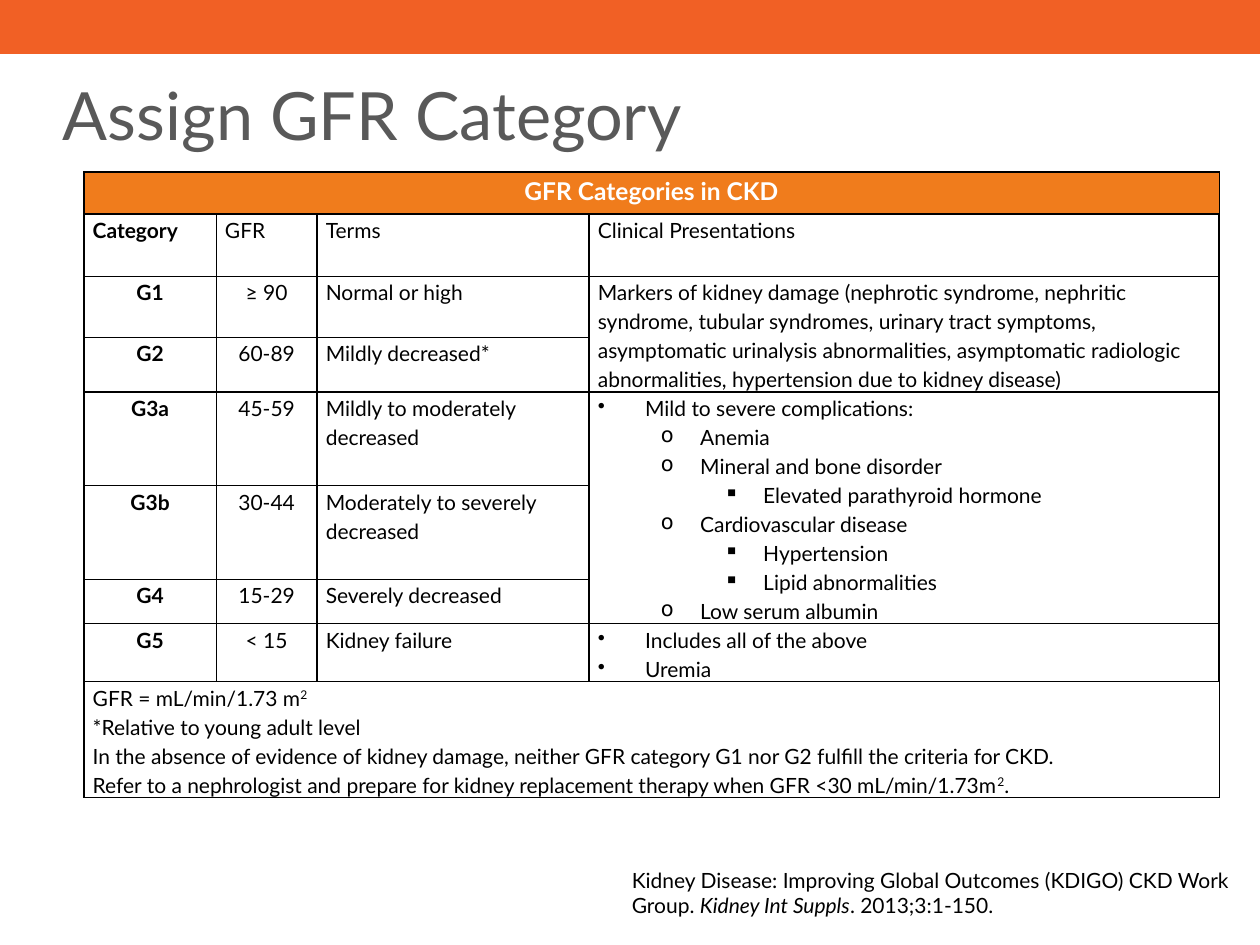
import pptx
import pptx.dml.color
import pptx.enum.shapes
import pptx.enum.text
import pptx.oxml
import pptx.oxml.ns
import pptx.util
from lxml import etree

Pt = pptx.util.Pt
RGBColor = pptx.dml.color.RGBColor
ALIGN = pptx.enum.text.PP_ALIGN
qn = pptx.oxml.ns.qn

BANNER = RGBColor(0xF1, 0x60, 0x25)
HEADER = RGBColor(0xF0, 0x7C, 0x1C)
GREY = RGBColor(0x59, 0x59, 0x59)
WHITE = RGBColor(0xFF, 0xFF, 0xFF)
BLACK = RGBColor(0, 0, 0)
FONT = "Lato"

TITLE = "Assign GFR Category"
TABLE_TITLE = "GFR Categories in CKD"
HEADINGS = ["Category", "GFR", "Terms", "Clinical Presentations"]
CATEGORIES = [
    ("G1", "≥ 90", "Normal or high"),
    ("G2", "60-89", "Mildly decreased*"),
    ("G3a", "45-59", "Mildly to moderately decreased"),
    ("G3b", "30-44", "Moderately to severely decreased"),
    ("G4", "15-29", "Severely decreased"),
    ("G5", "< 15", "Kidney failure"),
]
# (first row, last row, paragraphs as (bullet level or None, text))
PRESENTATIONS = [
    (2, 3, [(None, "Markers of kidney damage (nephrotic syndrome, nephritic syndrome, "
                   "tubular syndromes, urinary tract symptoms, asymptomatic urinalysis "
                   "abnormalities, asymptomatic radiologic abnormalities, hypertension "
                   "due to kidney disease)")]),
    (4, 6, [(0, "Mild to severe complications:"),
            (1, "Anemia"),
            (1, "Mineral and bone disorder"),
            (2, "Elevated parathyroid hormone"),
            (1, "Cardiovascular disease"),
            (2, "Hypertension"),
            (2, "Lipid abnormalities"),
            (1, "Low serum albumin")]),
    (7, 7, [(0, "Includes all of the above"), (0, "Uremia")]),
]
SUP = {"sup": True}
NOTES = [
    [("GFR = mL/min/1.73 m", {}), ("2", SUP)],
    "*Relative to young adult level",
    "In the absence of evidence of kidney damage, neither GFR category G1 nor G2 "
    "fulfill the criteria for CKD.",
    [("Refer to a nephrologist and prepare for kidney replacement therapy when "
      "GFR <30 mL/min/1.73m", {}), ("2", SUP), (".", {})],
]
SOURCE = [
    ("Kidney Disease: Improving Global Outcomes (KDIGO) CKD Work Group. ", {}),
    ("Kidney Int Suppls", {"italic": True}),
    (". 2013;3:1-150.", {}),
]

# level: (bullet, left margin, hanging indent)
BULLETS = [("•", 27, -27), ("o", 58.5, -22.5), ("▪", 94.5, -22.5)]
COL_WIDTHS = [75.6, 57.6, 155.5, 360]
ROW_HEIGHTS = [24, 35.3, 35, 31.3, 53.5, 53.5, 25.5, 33.1, 66.3]
THICK_ROW_EDGES = {0, 1, 4, 7, 8, 9}
THICK_COL_EDGES = {0, 2, 3, 4}
THICK, THIN = 1, 0.5


def add_text(tf, text, size=12, color=BLACK, bold=False, align=None, spacing=None, level=None):
    """Add one paragraph; text is a string or a list of (text, run format)."""
    p = tf.paragraphs[0]
    if p.runs:
        p = tf.add_paragraph()
    if level is not None:
        bullet, margin, indent = BULLETS[level]
        p.level = level
        pPr = p._p.get_or_add_pPr()
        pPr.set("marL", str(Pt(margin)))
        pPr.set("indent", str(Pt(indent)))
        etree.SubElement(pPr, qn("a:buChar"), char=bullet)
    p.alignment = align
    p.line_spacing = spacing
    for part, fmt in [(text, {})] if isinstance(text, str) else text:
        r = p.add_run()
        r.text = part
        r.font.name = FONT
        r.font.size = Pt(size)
        r.font.bold = bold
        r.font.italic = fmt.get("italic", False)
        r.font.color.rgb = color
        if fmt.get("sup"):
            r.font._element.set("baseline", "30000")


def add_box(slide, left, top, width, height, inset=None):
    tf = slide.shapes.add_textbox(Pt(left), Pt(top), Pt(width), Pt(height)).text_frame
    tf.word_wrap = True
    if inset is not None:
        tf.margin_left = tf.margin_right = tf.margin_top = tf.margin_bottom = Pt(inset)
    return tf


def style_cell(cell, row, col):
    """Set margins, fill and the four borders of a cell."""
    cell.margin_left = cell.margin_right = Pt(5)
    cell.margin_top = cell.margin_bottom = 0
    tcPr = cell._tc.get_or_add_tcPr()
    edges = [("a:lnL", col in THICK_COL_EDGES), ("a:lnR", col + 1 in THICK_COL_EDGES),
             ("a:lnT", row in THICK_ROW_EDGES), ("a:lnB", row + 1 in THICK_ROW_EDGES)]
    for tag, thick in edges:
        ln = etree.SubElement(tcPr, qn(tag), w=str(Pt(THICK if thick else THIN)))
        solid = etree.SubElement(ln, qn("a:solidFill"))
        etree.SubElement(solid, qn("a:srgbClr"), val=str(BLACK))
    cell.fill.solid()
    cell.fill.fore_color.rgb = HEADER if row == 0 else WHITE


def add_gfr_table(slide):
    table = slide.shapes.add_table(
        len(ROW_HEIGHTS), len(COL_WIDTHS), Pt(48), Pt(98.4),
        Pt(sum(COL_WIDTHS)), Pt(sum(ROW_HEIGHTS))).table
    table.horz_banding = False
    for col, width in zip(table.columns, COL_WIDTHS):
        col.width = Pt(width)
    for row, height in zip(table.rows, ROW_HEIGHTS):
        row.height = Pt(height)
    for row in range(len(ROW_HEIGHTS)):
        for col in range(len(COL_WIDTHS)):
            style_cell(table.cell(row, col), row, col)

    def write(row, col, text, **fmt):
        add_text(table.cell(row, col).text_frame, text, spacing=1.15, **fmt)

    last_row, last_col = len(ROW_HEIGHTS) - 1, len(COL_WIDTHS) - 1
    for row in (0, last_row):
        table.cell(row, 0).merge(table.cell(row, last_col))
    write(0, 0, TABLE_TITLE, size=14, color=WHITE, bold=True, align=ALIGN.CENTER)
    for col, heading in enumerate(HEADINGS):
        write(1, col, heading, bold=col == 0)
    for row, values in enumerate(CATEGORIES, start=2):
        for col, value in enumerate(values):
            write(row, col, value, bold=col == 0, align=ALIGN.CENTER if col < 2 else None)
    for first, last, paragraphs in PRESENTATIONS:
        if last > first:
            table.cell(first, last_col).merge(table.cell(last, last_col))
        for level, text in paragraphs:
            write(first, last_col, text, level=level)
    for note in NOTES:
        write(last_row, 0, note)


def main():
    prs = pptx.Presentation()
    prs.slide_width, prs.slide_height = Pt(720), Pt(540)
    slide = prs.slides.add_slide(prs.slide_layouts[6])

    banner = slide.shapes.add_shape(
        pptx.enum.shapes.MSO_SHAPE.RECTANGLE, 0, 0, prs.slide_width, Pt(30))
    banner.shadow.inherit = False
    banner.fill.solid()
    banner.fill.fore_color.rgb = BANNER
    banner.line.color.rgb = BANNER
    banner.line.width = Pt(2)

    add_text(add_box(slide, 36, 42, 648, 54, inset=0), TITLE, size=38, color=GREY)
    add_gfr_table(slide)
    add_text(add_box(slide, 354, 492, 360, 36), SOURCE)
    prs.save("out.pptx")


if __name__ == "__main__":
    main()
